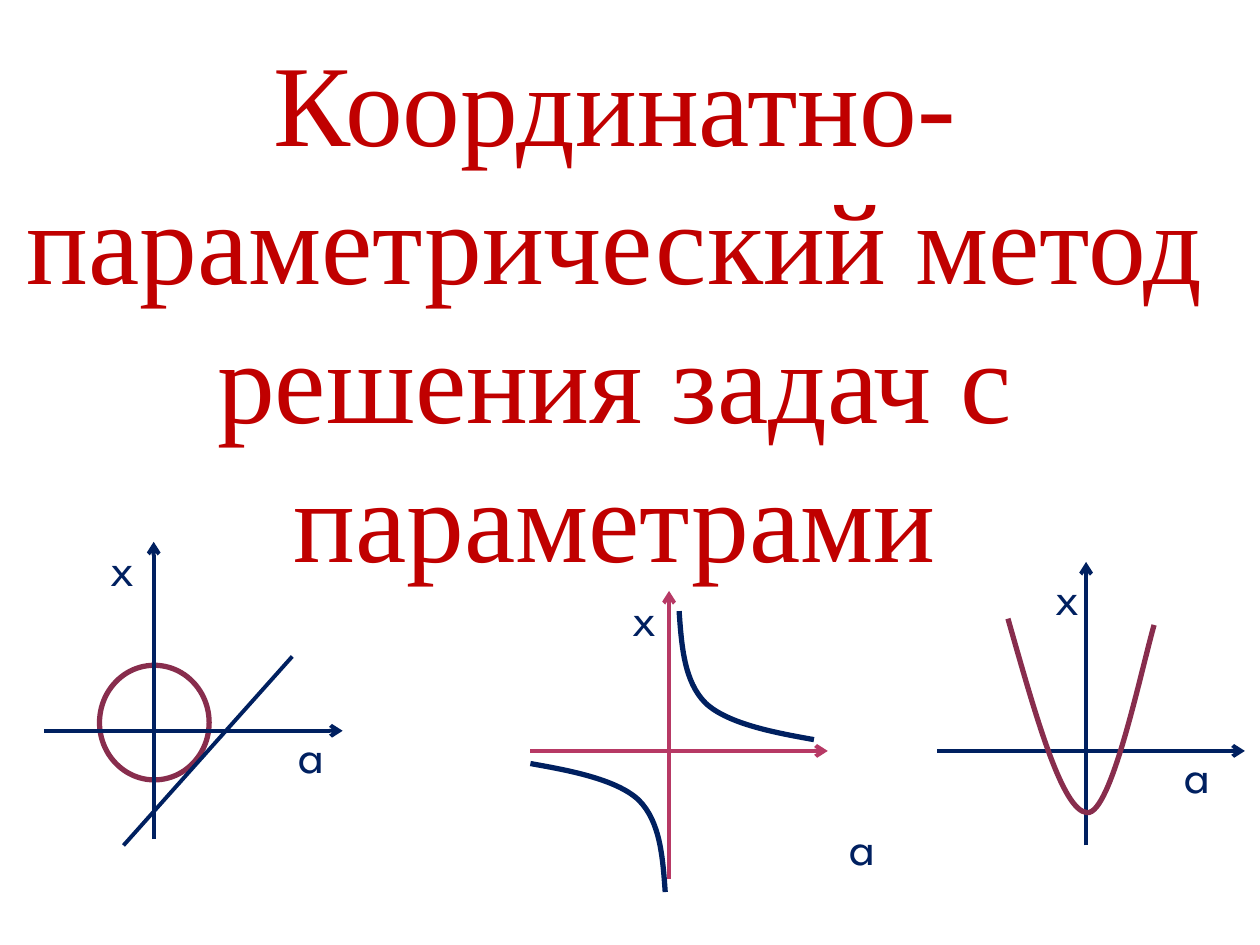
"""Build the title slide on the coordinate-parametric method with three graph sketches."""
from dataclasses import dataclass
from typing import Any, Sequence

import pptx
import pptx.dml.color
import pptx.enum.shapes
import pptx.enum.text
import pptx.oxml
import pptx.oxml.ns
import pptx.util

RGBColor = pptx.dml.color.RGBColor
NAVY = RGBColor(0x00, 0x20, 0x60)
WINE = RGBColor(0x88, 0x2D, 0x4D)
ROSE = RGBColor(0xB7, 0x39, 0x65)
RED = RGBColor(0xC0, 0x00, 0x00)

COLUMNS, ROWS = 10, 7.5
CELL = pptx.util.Inches(1)
THIN, THICK = 2.25, 3
LABEL_HEIGHT = 0.57

Point = tuple[float, float]


@dataclass(frozen=True)
class Segment:
    start: Point
    end: Point
    color: RGBColor = NAVY
    arrow: bool = True


@dataclass(frozen=True)
class Curve:
    points: Sequence[Point]
    color: RGBColor


@dataclass(frozen=True)
class Label:
    text: str
    left: float
    top: float
    width: float


def grid(*cells: float) -> list[int]:
    return [round(c * CELL) for c in cells]


def apply(obj: Any, values: dict[str, Any]) -> None:
    for name, value in values.items():
        setattr(obj, name, value)


def element(tag: str, attributes: str = "") -> Any:
    return pptx.oxml.parse_xml(f'<a:{tag} {pptx.oxml.ns.nsdecls("a")} {attributes}/>')


def style_line(sp: Any, color: RGBColor, width: float) -> None:
    sp.line.color.rgb = color
    sp.line.width = pptx.util.Pt(width)


def style_outline(sp: Any, color: RGBColor) -> None:
    sp.shadow.inherit = False
    sp.fill.background()
    style_line(sp, color, THICK)


def draw_segment(s: Any, seg: Segment) -> None:
    sp = s.shapes.add_connector(
        pptx.enum.shapes.MSO_CONNECTOR.STRAIGHT, *grid(*seg.start, *seg.end)
    )
    style_line(sp, seg.color, THIN)
    if seg.arrow:
        sp.line._get_or_add_ln().append(element("tailEnd", 'type="arrow"'))
    sp._element.spPr.append(element("effectLst"))


def draw_curve(s: Any, curve: Curve) -> None:
    start, *rest = (tuple(grid(*point)) for point in curve.points)
    builder = s.shapes.build_freeform(*start)
    builder.add_line_segments(rest, close=False)
    sp = builder.convert_to_shape()
    lines = sp._element.xpath(".//a:lnTo")
    for i in range(0, len(lines), 3):
        bezier = element("cubicBezTo")
        lines[i].addprevious(bezier)
        for line in lines[i:i + 3]:
            bezier.append(line[0])
            line.getparent().remove(line)
    style_outline(sp, curve.color)


def draw_label(s: Any, label: Label) -> None:
    sp = s.shapes.add_textbox(*grid(label.left, label.top, label.width, LABEL_HEIGHT))
    tf = sp.text_frame
    apply(tf, {"word_wrap": False,
               "auto_size": pptx.enum.text.MSO_AUTO_SIZE.SHAPE_TO_FIT_TEXT})
    r = tf.paragraphs[0].add_run()
    r.text = label.text
    apply(r.font, {"name": "League Spartan", "size": pptx.util.Pt(28)})
    r.font.color.rgb = NAVY


def draw_title(s: Any, text: str) -> None:
    sp = s.shapes.title
    apply(sp, dict(zip(("left", "top", "width", "height"), grid(0, 0.36, 9.76, 4.17))))
    tf = sp.text_frame
    apply(tf, {"word_wrap": True, "auto_size": pptx.enum.text.MSO_AUTO_SIZE.NONE,
               "vertical_anchor": pptx.enum.text.MSO_ANCHOR.MIDDLE})
    p = tf.paragraphs[0]
    p.alignment = pptx.enum.text.PP_ALIGN.CENTER
    r = p.add_run()
    r.text = text
    apply(r.font, {"name": "Times New Roman", "size": pptx.util.Pt(66)})
    r.font.color.rgb = RED


BRANCH = ((5.39, 4.85), (5.41, 5.13), (5.43, 5.41), (5.6, 5.58),
          (5.78, 5.75), (6.18, 5.82), (6.46, 5.87))
MIRRORED_BRANCH = tuple((10.67 - x, 11.93 - y) for x, y in BRANCH)
PARABOLA = ((8, 4.91), (8.22, 5.68), (8.43, 6.44), (8.63, 6.45),
            (8.82, 6.46), (9.05, 5.35), (9.16, 4.96))

SEGMENTS = (
    Segment((1.22, 6.66), (1.22, 4.3)),
    Segment((0.35, 5.8), (2.72, 5.8)),
    Segment((0.98, 6.71), (2.32, 5.21), arrow=False),
    Segment((5.31, 6.98), (5.31, 4.69), ROSE),
    Segment((4.21, 5.96), (6.57, 5.96), ROSE),
    Segment((8.62, 6.71), (8.62, 4.46)),
    Segment((7.44, 5.96), (9.88, 5.96)),
)
CURVES = (Curve(MIRRORED_BRANCH, NAVY), Curve(BRANCH, NAVY), Curve(PARABOLA, WINE))
LABELS = (
    Label("x", 0.78, 4.22, 0.39),
    Label("x", 4.92, 4.61, 0.39),
    Label("x", 8.28, 4.45, 0.39),
    Label("a", 2.27, 5.7, 0.47),
    Label("a", 6.64, 6.43, 0.47),
    Label("a", 9.3, 5.86, 0.47),
)


def main() -> None:
    prs = pptx.Presentation()
    prs.slide_width, prs.slide_height = grid(COLUMNS, ROWS)
    s = prs.slides.add_slide(prs.slide_layouts[5])
    circle = s.shapes.add_shape(
        pptx.enum.shapes.MSO_SHAPE.OVAL, *grid(0.79, 5.28, 0.87, 0.91))
    style_outline(circle, WINE)
    draw_title(s, "Координатно-параметрический метод решения задач с параметрами")
    for seg in SEGMENTS:
        draw_segment(s, seg)
    for curve in CURVES:
        draw_curve(s, curve)
    for label in LABELS:
        draw_label(s, label)
    prs.save("out.pptx")


if __name__ == "__main__":
    main()
